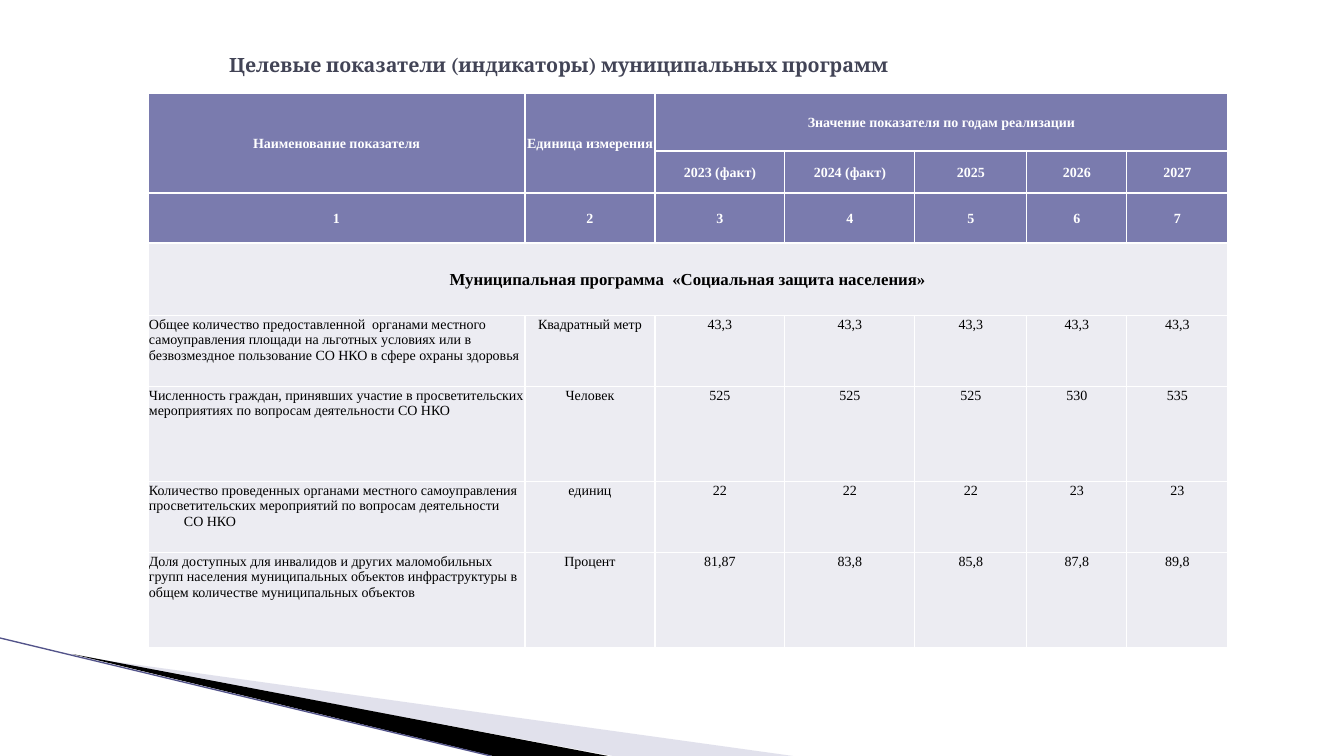
from lxml import etree
from pptx import Presentation
from pptx.dml.color import RGBColor
from pptx.enum.shapes import MSO_CONNECTOR
from pptx.enum.text import MSO_ANCHOR, MSO_AUTO_SIZE, PP_ALIGN
from pptx.oxml.ns import qn
from pptx.util import Pt

LEFT, CENTER = PP_ALIGN.LEFT, PP_ALIGN.CENTER
TOP, MIDDLE = MSO_ANCHOR.TOP, MSO_ANCHOR.MIDDLE
NO_FIT = MSO_AUTO_SIZE.NONE
STRAIGHT = MSO_CONNECTOR.STRAIGHT
TITLE_ONLY = 5
PX = 914400 / 100.8

WHITE, BLACK = "FFFFFF", "000000"
HEAD, BODY = "7A7BAE", "ECECF2"
INDENT = 35

COLS = [377, 130, 130, 130, 112, 100, 101]
ROWS = [58, 42, 50, 73, 71, 95, 71, 95]
HEADER = [
    ["Наименование показателя", "Единица измерения",
     "Значение показателя по годам реализации", "", "", "", ""],
    ["", "", "2023 (факт)", "2024 (факт)", "2025", "2026", "2027"],
    ["1", "2", "3", "4", "5", "6", "7"],
]
PROGRAM = "Муниципальная программа  «Социальная защита населения»"
# A line after "\n" becomes an indented paragraph
INDICATORS = [
    ["Общее количество предоставленной  органами местного самоуправления площади "
     "на льготных условиях или в безвозмездное пользование СО НКО в сфере охраны здоровья",
     "Квадратный метр", "43,3", "43,3", "43,3", "43,3", "43,3"],
    ["Численность граждан, принявших участие в просветительских мероприятиях "
     "по вопросам деятельности СО НКО",
     "Человек", "525", "525", "525", "530", "535"],
    ["Количество проведенных органами местного самоуправления просветительских "
     "мероприятий по вопросам деятельности\nСО НКО",
     "единиц", "22", "22", "22", "23", "23"],
    ["Доля доступных для инвалидов и других маломобильных групп населения "
     "муниципальных объектов инфраструктуры в общем количестве муниципальных объектов",
     "Процент", "81,87", "83,8", "85,8", "87,8", "89,8"],
]
# First and last cell of each merged area
MERGES = [((0, 0), (1, 0)), ((0, 1), (1, 1)), ((0, 2), (0, 6)), ((3, 0), (3, 6))]


def px(n):
    return round(n * PX)


def rgb(color):
    return RGBColor.from_string(color)


class Deck:
    font = "Times New Roman"

    def __init__(self, width, height):
        self.prs = Presentation()
        self.prs.slide_width, self.prs.slide_height = px(width), px(height)
        self.s = self.prs.slides.add_slide(self.prs.slide_layouts[TITLE_ONLY])

    def style(self, p, size, color, bold=False, align=LEFT, font=None):
        p.alignment = align
        p.font.name = font or self.font
        p.font.size = Pt(size)
        p.font.bold = bold
        p.font.color.rgb = rgb(color)

    def title(self, text, x, y, w, h):
        sp = self.s.shapes.title
        sp.left, sp.top, sp.width, sp.height = px(x), px(y), px(w), px(h)
        tf = sp.text_frame
        tf.text = text
        tf.word_wrap, tf.auto_size, tf.vertical_anchor = True, NO_FIT, MIDDLE
        self.style(tf.paragraphs[0], 14, "424456", bold=True, font="Cambria")

    def polygon(self, points, color, alpha=100):
        fb = self.s.shapes.build_freeform(*points[0], scale=PX)
        fb.add_line_segments(points[1:], close=True)
        sp = fb.convert_to_shape()
        sp.shadow.inherit = False
        sp.fill.solid()
        sp.fill.fore_color.rgb = rgb(color)
        sp.line.fill.background()
        if alpha < 100:
            clr = sp._element.spPr.find(qn("a:solidFill"))[0]
            etree.SubElement(clr, qn("a:alpha"), val=str(alpha * 1000))

    def line(self, x1, y1, x2, y2, color, width):
        c = self.s.shapes.add_connector(STRAIGHT, px(x1), px(y1), px(x2), px(y2))
        c.line.color.rgb = rgb(color)
        c.line.width = Pt(width)
        etree.SubElement(c._element.spPr, qn("a:effectLst"))

    def table(self, x, y, cols, rows):
        tbl = self.s.shapes.add_table(len(rows), len(cols), px(x), px(y),
                                      px(sum(cols)), px(sum(rows))).table
        tbl.horz_banding = False
        for col, w in zip(tbl.columns, cols):
            col.width = px(w)
        for row, h in zip(tbl.rows, rows):
            row.height = px(h)
        return tbl

    def cell(self, cell, text, fill, size, color, bold, align, anchor):
        cell.margin_left = cell.margin_right = cell.margin_top = px(1)
        cell.margin_bottom = 0
        cell.vertical_anchor = anchor
        cell.fill.solid()
        cell.fill.fore_color.rgb = rgb(fill)
        self.borders(cell)
        cell.text_frame.text = text
        for i, p in enumerate(cell.text_frame.paragraphs):
            if i:
                p._p.get_or_add_pPr().set("marL", str(px(INDENT)))
            self.style(p, size, color, bold, align)

    def borders(self, cell):
        tcPr = cell._tc.get_or_add_tcPr()
        for i, side in enumerate(("lnL", "lnR", "lnT", "lnB")):
            ln = etree.Element(qn("a:" + side), w=str(Pt(1)))
            fill = etree.SubElement(ln, qn("a:solidFill"))
            etree.SubElement(fill, qn("a:srgbClr"), val=WHITE)
            tcPr.insert(i, ln)


def main():
    deck = Deck(1344, 756)

    # Corner decoration
    deck.polygon([(74, 656), (793, 756), (613, 756)], "B6B6D1", alpha=40)
    deck.polygon([(72, 654), (608, 756), (493, 756)], BLACK)
    deck.line(0, 638, 491, 756, "53548A", 0.95)

    # Title
    deck.title("Целевые показатели (индикаторы) муниципальных программ",
               219, 30, 907, 70)

    # Table of indicators
    tbl = deck.table(148, 93, COLS, ROWS)
    program_row = [PROGRAM] + [""] * (len(COLS) - 1)
    for r, row in enumerate(HEADER + [program_row] + INDICATORS):
        for c, text in enumerate(row):
            if r < len(HEADER):
                look = (HEAD, 10, WHITE, True, CENTER, MIDDLE)
            elif r == len(HEADER):
                look = (BODY, 12, BLACK, True, CENTER, MIDDLE)
            else:
                look = (BODY, 10, BLACK, False, CENTER if c else LEFT, TOP)
            deck.cell(tbl.cell(r, c), text, *look)
    for first, last in MERGES:
        tbl.cell(*first).merge(tbl.cell(*last))

    deck.prs.save("out.pptx")


if __name__ == "__main__":
    main()
